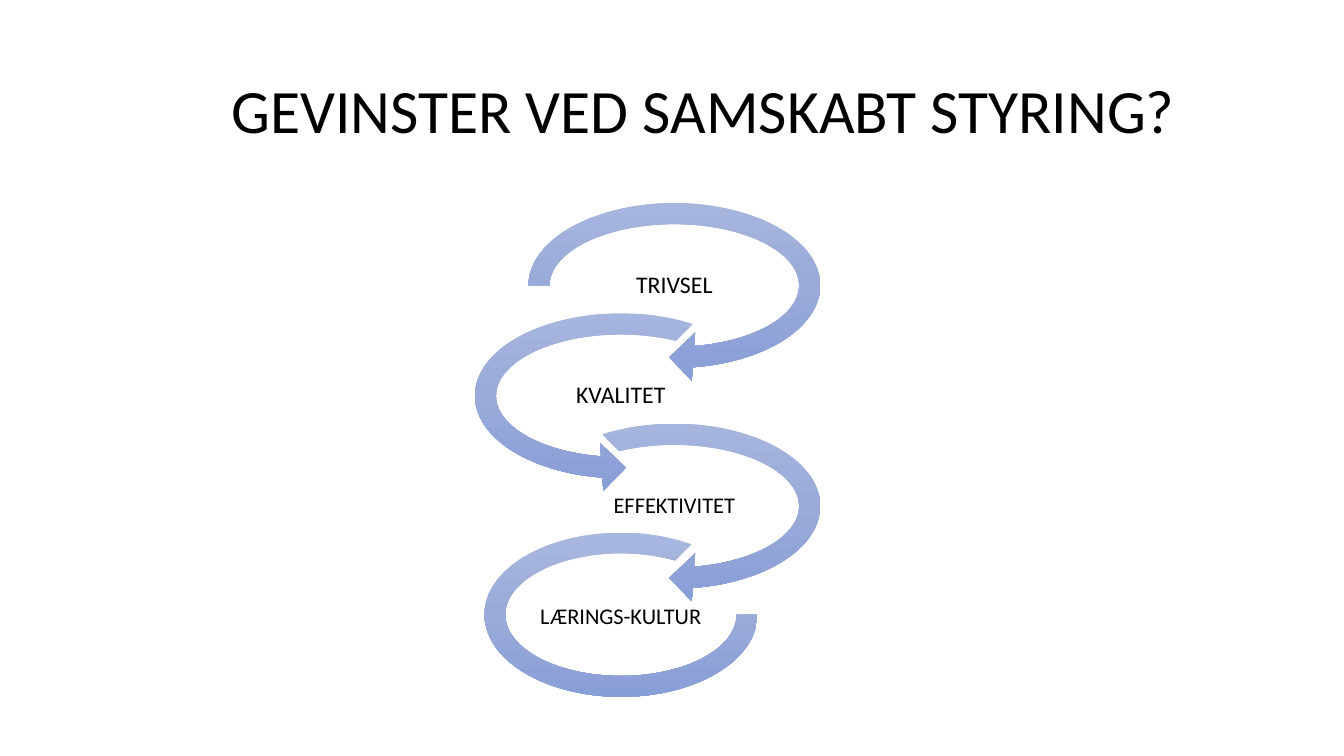
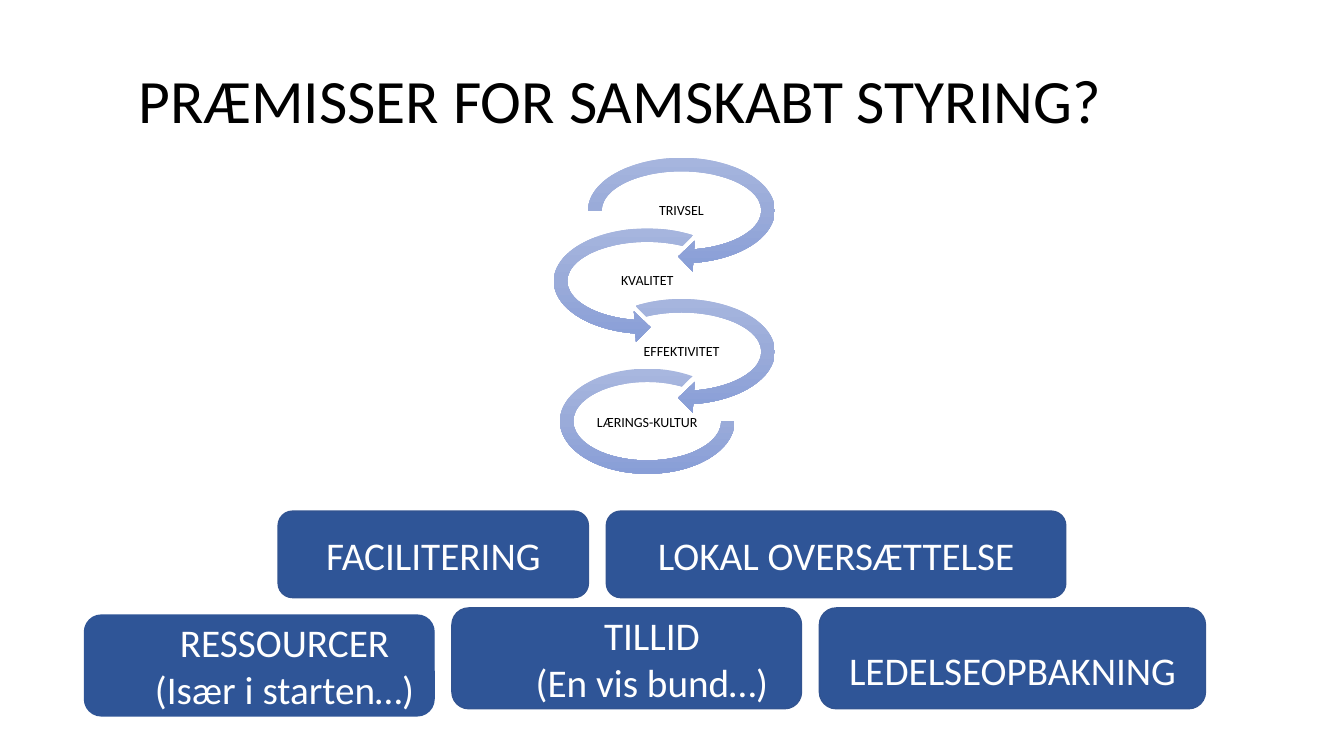
import copy
from dataclasses import dataclass

import pptx
import pptx.dml.color
import pptx.enum.shapes
import pptx.enum.text
import pptx.oxml.ns
import pptx.shapes.autoshape
import pptx.shapes.shapetree
import pptx.slide
import pptx.text.text
import pptx.util

Cm = pptx.util.Cm
Pt = pptx.util.Pt
MSO_SHAPE = pptx.enum.shapes.MSO_SHAPE
ALIGN = pptx.enum.text.PP_ALIGN

FONT = "Calibri"
COLORS = {
    "text": "000000",
    "block": "2F5597",
    "block_line": "325491",
    "block_text": "FFFFFF",
}
LOOP_STOPS = {0: "A8B7DF", 0.5: "9AABD9", 1: "889ED7"}

LOOP_PITCH = 2.78
LOOP_SHIFT = 1.35
LABEL_LEFT, LABEL_TOP, LABEL_W, LABEL_H = 1.78, 1.75, 4.47, 1.35
SMALL_SCALE = 0.64


@dataclass(frozen=True)
class Loop:
    label: str
    shape: MSO_SHAPE
    adjustments: tuple[float, ...]
    on_right: bool = False
    inset_left: float = 0
    inset_top: float = 0
    width: float = 8.03
    height: float = 4.83


@dataclass(frozen=True)
class Block:
    lines: tuple[str, ...]
    width: float
    drop: float = 0
    indent: float = 0
    spacing: float = 1
    line: str = "block_line"


@dataclass(frozen=True)
class BlockRow:
    left: float
    top: float
    height: float
    blocks: tuple[Block, ...]
    gap: float = 0.45


LOOPS = (
    Loop("TRIVSEL", MSO_SHAPE.CIRCULAR_ARROW,
         (0.11, 11.42, 45, 108, 0.125), on_right=True),
    Loop("KVALITET", MSO_SHAPE.LEFT_CIRCULAR_ARROW,
         (0.11, 11.42, 63, 189, 0.125)),
    Loop("EFFEKTIVITET", MSO_SHAPE.CIRCULAR_ARROW,
         (0.11, 11.42, 45, 135, 0.125), on_right=True),
    Loop("LÆRINGS-KULTUR", MSO_SHAPE.BLOCK_ARC, (0, 189, 0.127),
         inset_left=0.58, inset_top=0.3, width=6.88, height=4.14),
)

BLOCK_ROWS = (
    BlockRow(7.01, 12.88, 2.18, (
        Block(("FACILITERING",), 7.82),
        Block(("LOKAL OVERSÆTTELSE",), 11.58),
    )),
    BlockRow(2.13, 15.32, 2.54, (
        Block(("RESSOURCER", "(Især i starten…)"), 8.81,
              drop=0.18, indent=1.27, line="block"),
        Block(("TILLID", "(En vis bund…)"), 8.81, indent=1.27),
        Block(("LEDELSEOPBAKNING",), 9.73, spacing=1.5),
    )),
)


def rgb(value: str) -> pptx.dml.color.RGBColor:
    return pptx.dml.color.RGBColor.from_string(value)


def write(tf: pptx.text.text.TextFrame, lines: tuple[str, ...], size: float,
          color: str, align: ALIGN, spacing: float) -> None:
    tf.word_wrap = True
    tf.vertical_anchor = pptx.enum.text.MSO_ANCHOR.MIDDLE
    tf.text = "\n".join(lines)
    for p in tf.paragraphs:
        p.alignment = align
        p.line_spacing = spacing
        p.font.name = FONT
        p.font.size = Pt(size)
        p.font.color.rgb = rgb(COLORS[color])


def fill_gradient(sp: pptx.shapes.autoshape.Shape) -> None:
    sp.fill.gradient()
    sp.fill.gradient_angle = 270
    stop_list = next(sp.element.iter(pptx.oxml.ns.qn("a:gsLst")))
    stop_list.insert(1, copy.deepcopy(stop_list[0]))
    for stop, (position, color) in zip(sp.fill.gradient_stops, LOOP_STOPS.items()):
        stop.position = position
        stop.color.rgb = rgb(color)


def add_title(slide: pptx.slide.Slide, text: str, left: float, top: float) -> None:
    sp = slide.shapes.add_textbox(Cm(left), Cm(top), Cm(29.21), Cm(3.68))
    write(sp.text_frame, (text,), 44, "text", ALIGN.LEFT, 0.9)


def add_loop(shapes: pptx.shapes.shapetree.GroupShapes, loop: Loop,
             left: float, top: float, scale: float, size: float) -> None:
    sp = shapes.add_shape(
        loop.shape,
        Cm(left + loop.inset_left * scale), Cm(top + loop.inset_top * scale),
        Cm(loop.width * scale), Cm(loop.height * scale))
    for i, value in enumerate(loop.adjustments):
        sp.adjustments[i] = value
    sp.shadow.inherit = False
    sp.line.fill.background()
    fill_gradient(sp)

    label = shapes.add_textbox(
        Cm(left + LABEL_LEFT * scale), Cm(top + LABEL_TOP * scale),
        Cm(LABEL_W * scale), Cm(LABEL_H * scale))
    tf = label.text_frame
    tf.margin_left = tf.margin_right = tf.margin_top = tf.margin_bottom = Cm(0.03)
    write(tf, (loop.label,), size, "text", ALIGN.CENTER, 0.9)


def add_loop_chain(slide: pptx.slide.Slide, left: float, top: float,
                   scale: float, sizes: tuple[float, ...]) -> None:
    shapes = slide.shapes.add_group_shape().shapes
    for i, (loop, size) in enumerate(zip(LOOPS, sizes)):
        add_loop(shapes, loop, left + LOOP_SHIFT * scale * loop.on_right,
                 top + i * LOOP_PITCH * scale, scale, size)


def add_block_row(slide: pptx.slide.Slide, row: BlockRow) -> None:
    left = row.left
    for block in row.blocks:
        sp = slide.shapes.add_shape(
            MSO_SHAPE.ROUNDED_RECTANGLE, Cm(left), Cm(row.top + block.drop),
            Cm(block.width), Cm(row.height))
        sp.shadow.inherit = False
        sp.fill.solid()
        sp.fill.fore_color.rgb = rgb(COLORS["block"])
        sp.line.color.rgb = rgb(COLORS[block.line])
        sp.line.width = Pt(1)
        write(sp.text_frame, block.lines, 28, "block_text",
              ALIGN.CENTER, block.spacing)
        for p in sp.text_frame.paragraphs:
            p._p.get_or_add_pPr().set("marL", str(Cm(block.indent)))
        left += block.width + row.gap


def main() -> None:
    prs = pptx.Presentation()
    prs.slide_width, prs.slide_height = Cm(33.87), Cm(19.05)
    blank = prs.slide_layouts[6]

    gains = prs.slides.add_slide(blank)
    add_title(gains, "GEVINSTER VED SAMSKABT STYRING?", 5.59, 1.02)
    add_loop_chain(gains, 11.63, 4.78, 1, (17, 17, 16, 16))

    premises = prs.slides.add_slide(blank)
    add_title(premises, "PRÆMISSER FOR SAMSKABT STYRING?", 3.25, 0.76)
    add_loop_chain(premises, 13.74, 3.76, SMALL_SCALE, (10,) * len(LOOPS))
    for row in BLOCK_ROWS:
        add_block_row(premises, row)

    prs.save("out.pptx")


if __name__ == "__main__":
    main()
